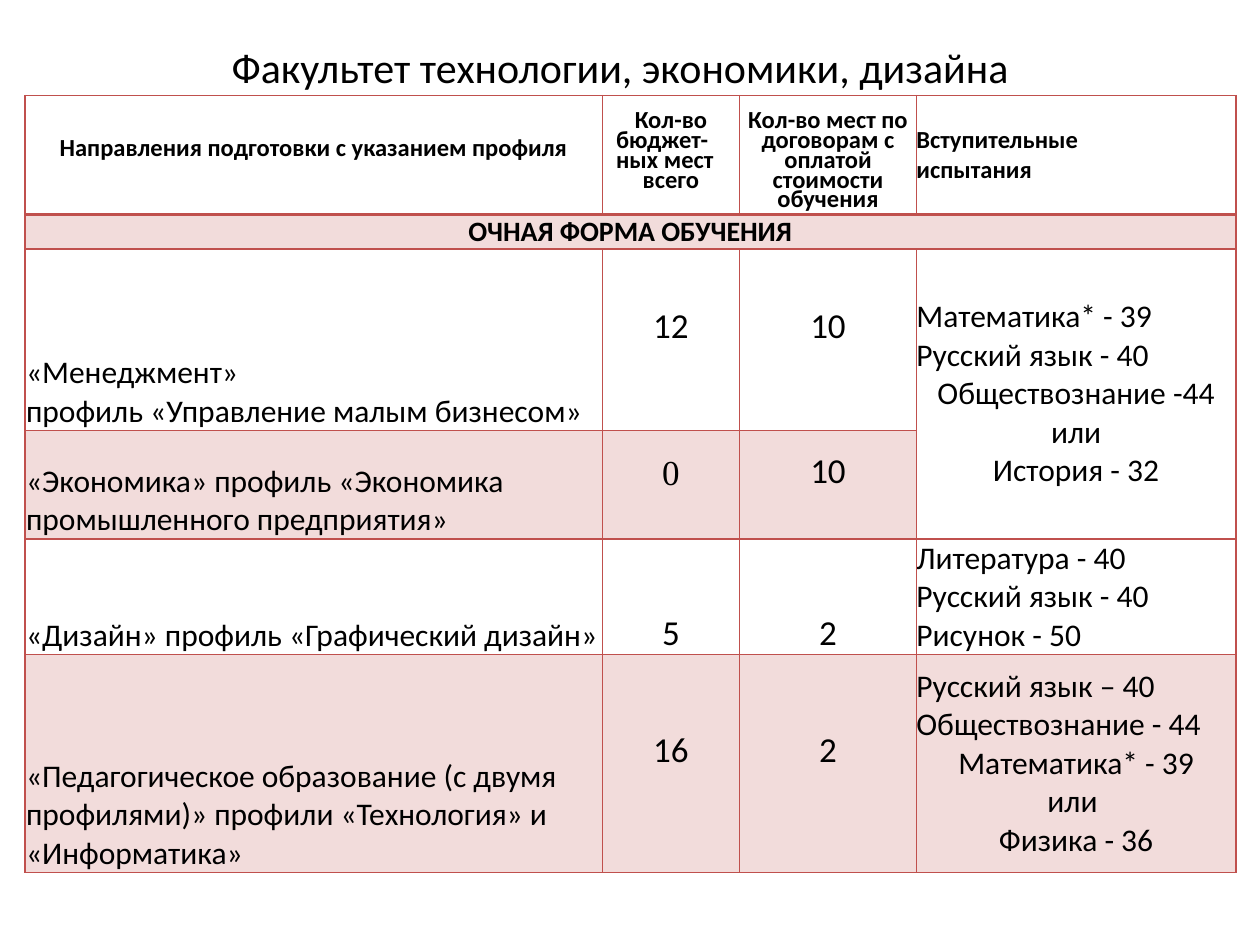
from lxml.etree import SubElement
from pptx import Presentation
from pptx.dml.color import RGBColor
from pptx.enum.text import MSO_ANCHOR, PP_ALIGN
from pptx.oxml.ns import qn
from pptx.util import Pt

BLACK = RGBColor(0, 0, 0)
RED = RGBColor(0xC0, 0x50, 0x4D)
PINK = RGBColor(0xF2, 0xDC, 0xDB)
LEFT, CENTER = PP_ALIGN.LEFT, PP_ALIGN.CENTER
TOP, MIDDLE, BOTTOM = MSO_ANCHOR.TOP, MSO_ANCHOR.MIDDLE, MSO_ANCHOR.BOTTOM

COLUMNS = [330, 78.5, 101, 182.5]
ROWS = [64, 19, 104, 62, 62, 124.5]
TIGHT, HEADER_LINE = 9.5, 11.3

HEADER = {"size": 14, "bold": True, "align": CENTER, "spacing": HEADER_LINE}
SECTION = {"size": 16, "bold": True, "align": CENTER, "anchor": BOTTOM}
PROGRAM = {"anchor": BOTTOM}
PLACES = {"size": 20, "align": CENTER, "spacing": TIGHT}
EXAMS = {"side": 0}

# Each program: row, name, budget places, paid places, shaded, place format
PROGRAMS = [
    (2, ["«Менеджмент»", "профиль «Управление малым бизнесом»"], "12", "10", False, {}),
    (3, ["«Экономика» профиль «Экономика промышленного предприятия»"], "0", "10", True, {}),
    (4, ["«Дизайн» профиль «Графический дизайн»"], "5", "2", False, {"anchor": BOTTOM}),
    (5, ["«Педагогическое образование (с двумя профилями)» профили «Технология» и «Информатика»"],
     "16", "2", True, {}),
]
# Each exam list: row, left-aligned lines, centred lines, shaded
EXAM_LISTS = [
    (2, ["Математика* - 39", "Русский язык - 40"],
     ["Обществознание -44", "или", "История - 32"], False),
    (4, ["Литература - 40", "Русский язык - 40", "Рисунок - 50"], [], False),
    (5, ["Русский язык – 40", "Обществознание - 44"],
     ["Математика* - 39", "или ", "Физика - 36"], True),
]


class Page:
    def __init__(self, deck):
        self.slide = deck.slides.add_slide(deck.slide_layouts[5])
        self.style = {"font": "Calibri", "size": 18, "bold": False, "align": LEFT,
                      "anchor": MIDDLE, "spacing": None, "side": 0.7, "top": 0}

    def add_lines(self, frame, lines, look):
        """Fill a text frame; a line is a string or (string, alignment, indent)."""
        for index, line in enumerate(lines):
            text, align, indent = (line, look["align"], 0) if isinstance(line, str) else line
            para = frame.paragraphs[0] if index == 0 else frame.add_paragraph()
            values = {"alignment": align, "space_before": Pt(0), "space_after": Pt(0),
                      "line_spacing": Pt(look["spacing"]) if look["spacing"] else 1.0}
            for name, value in values.items():
                setattr(para, name, value)
            if indent:
                para._p.get_or_add_pPr().set("marL", str(Pt(indent)))
            span = para.add_run()
            span.text = text
            for name, value in {"name": look["font"], "size": Pt(look["size"]),
                                "bold": look["bold"]}.items():
                setattr(span.font, name, value)
            span.font.color.rgb = BLACK

    def title(self, text, left, top, width, height):
        box = self.slide.shapes.title
        for name, value in {"left": left, "top": top, "width": width, "height": height}.items():
            setattr(box, name, Pt(value))
        box.text_frame.vertical_anchor = MIDDLE
        self.add_lines(box.text_frame, [text], {**self.style, "size": 24, "align": CENTER})

    def table(self, left, top, columns, rows):
        frame = self.slide.shapes.add_table(len(rows), len(columns), Pt(left), Pt(top),
                                            Pt(sum(columns)), Pt(sum(rows)))
        table = frame.table
        table.first_row = table.horz_banding = False
        for column, width in zip(table.columns, columns):
            column.width = Pt(width)
        for row, height in zip(table.rows, rows):
            row.height = Pt(height)
        for index, row in enumerate(table.rows):
            for cell in row.cells:
                self.borders(cell, {"lnL": 1, "lnR": 1, "lnT": 2 if index == 1 else 1,
                                    "lnB": 2 if index == 0 else 1})
                cell.fill.background()
        return table

    def borders(self, cell, widths):
        properties = cell._tc.get_or_add_tcPr()
        for tag, width in widths.items():
            line = SubElement(properties, qn(f"a:{tag}"), w=str(Pt(width)))
            fill = SubElement(line, qn("a:solidFill"))
            SubElement(fill, qn("a:srgbClr"), val=str(RED))

    def cell(self, cell, lines, look, shaded=False):
        look = {**self.style, **look}
        margins = {"margin_left": look["side"], "margin_right": look["side"],
                   "margin_top": look["top"], "margin_bottom": 0}
        for name, value in margins.items():
            setattr(cell, name, Pt(value))
        cell.vertical_anchor = look["anchor"]
        if shaded:
            cell.fill.solid()
            cell.fill.fore_color.rgb = PINK
        self.add_lines(cell.text_frame, lines, look)


def main():
    deck = Presentation()
    deck.slide_width, deck.slide_height = Pt(720), Pt(540)
    page = Page(deck)
    page.title("Факультет технологии, экономики, дизайна", 14.4, 9.4, 680, 57)

    table = page.table(14.2, 54.7, COLUMNS, ROWS)
    table.cell(1, 0).merge(table.cell(1, 3))
    table.cell(2, 3).merge(table.cell(3, 3))

    headers = [
        (["Направления подготовки с указанием профиля"], {"spacing": TIGHT}),
        (["Кол-во", ("бюджет-ных мест", LEFT, 7.2), "всего"], {}),
        (["Кол-во мест по договорам с оплатой стоимости обучения"],
         {"anchor": TOP, "top": HEADER_LINE}),
        (["Вступительные", "испытания"], {**EXAMS, "align": LEFT, "spacing": None}),
    ]
    for column, (lines, look) in enumerate(headers):
        page.cell(table.cell(0, column), lines, {**HEADER, **look})
    page.cell(table.cell(1, 0), ["ОЧНАЯ ФОРМА ОБУЧЕНИЯ"], SECTION, shaded=True)

    for row, name, budget, paid, shaded, look in PROGRAMS:
        page.cell(table.cell(row, 0), name, PROGRAM, shaded)
        for column, count in enumerate((budget, paid), start=1):
            font = {"font": "Times New Roman"} if count == "0" else {}
            page.cell(table.cell(row, column), [count], {**PLACES, **look, **font}, shaded)

    for row, required, optional, shaded in EXAM_LISTS:
        lines = required + [(text, CENTER, 0) for text in optional]
        page.cell(table.cell(row, 3), lines, EXAMS, shaded)

    deck.save("out.pptx")


if __name__ == "__main__":
    main()
